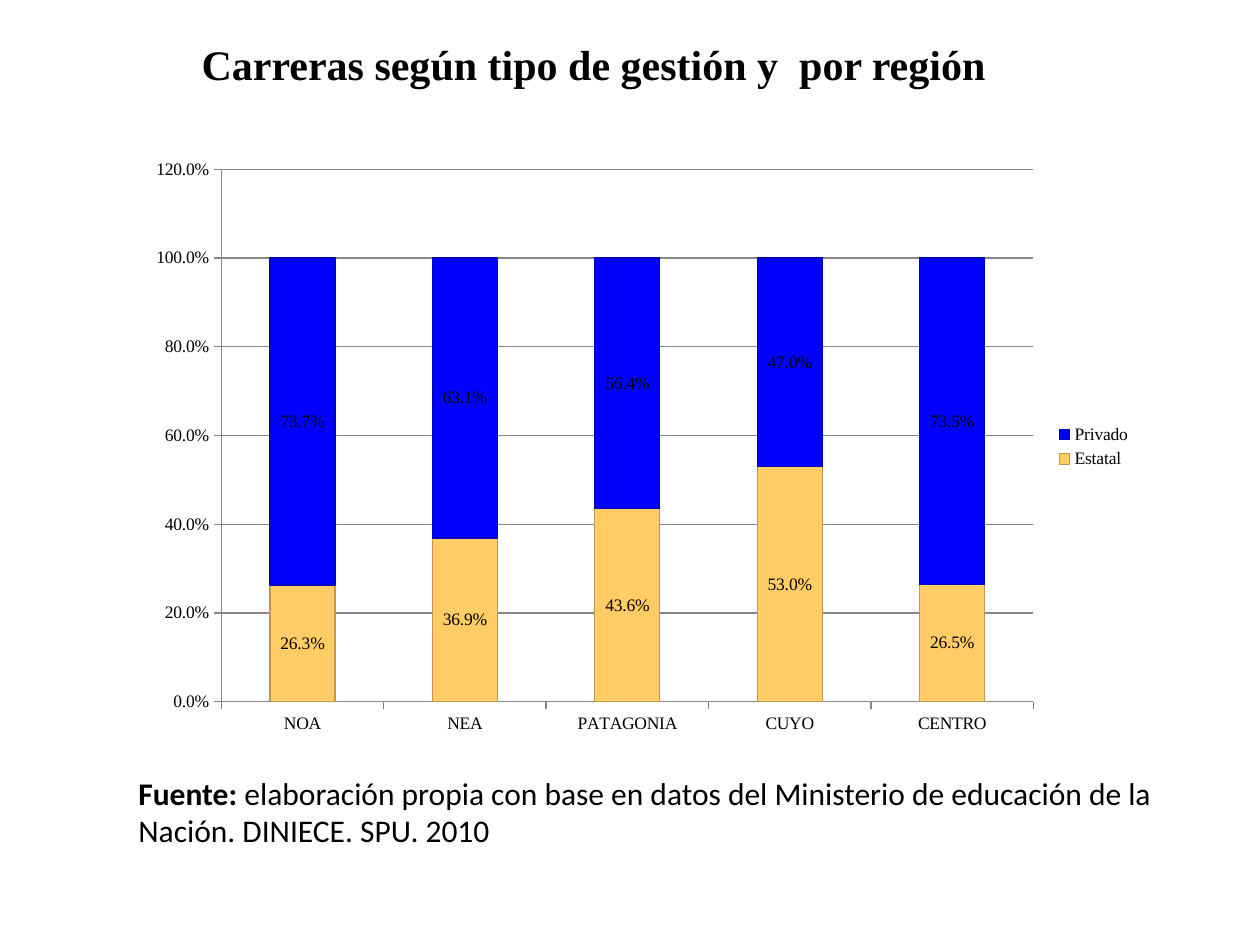
from pptx import Presentation
from pptx.chart.data import CategoryChartData
from pptx.dml.color import RGBColor
from pptx.enum.chart import XL_CHART_TYPE, XL_LABEL_POSITION, XL_LEGEND_POSITION, XL_TICK_MARK
from pptx.enum.text import MSO_ANCHOR, PP_ALIGN
from pptx.util import Inches, Pt

STACKED = XL_CHART_TYPE.COLUMN_STACKED
CENTER = XL_LABEL_POSITION.CENTER
RIGHT = XL_LEGEND_POSITION.RIGHT
OUTSIDE = XL_TICK_MARK.OUTSIDE
MIDDLE = MSO_ANCHOR.MIDDLE
LEFT = PP_ALIGN.LEFT

COLORS = {
    "text": "000000",
    "axis": "868686",
    "Estatal": "FFCC66",
    "Estatal edge": "BF994C",
    "Privado": "0000FF",
    "Privado edge": "0000BF",
}
PERCENT = "0.0%"


def color(name):
    return RGBColor.from_string(COLORS[name])


def set_font(font, family, size, bold=False):
    font.name = family
    font.size = Pt(size)
    font.bold = bold
    font.color.rgb = color("text")


prs = Presentation()
prs.slide_width, prs.slide_height = Inches(10), Inches(7.5)
slide = prs.slides.add_slide(prs.slide_layouts[5])

# Title
title = slide.shapes.title
title.left, title.top = Inches(1.5), Inches(0.25)
title.width, title.height = Inches(8.5), Inches(0.51)
title.text_frame.text = "Carreras según tipo de gestión y  por región"
title.text_frame.vertical_anchor = MIDDLE
heading = title.text_frame.paragraphs[0]
heading.alignment = LEFT
set_font(heading.runs[0].font, "Times New Roman", 24, True)

# Source note
source = slide.shapes.add_textbox(Inches(1), Inches(6.09), Inches(8.42), Inches(0.71))
source.text_frame.word_wrap = True
citation = source.text_frame.paragraphs[0]
for wording, bold in (
    ("Fuente: ", True),
    ("elaboración propia con base en datos del Ministerio de educación "
     "de la Nación. DINIECE. SPU. 2010", False),
):
    run = citation.add_run()
    run.text = wording
    set_font(run.font, "Calibri", 18, bold)

# Share of each management type by region
shares = CategoryChartData(number_format=PERCENT)
shares.categories = ["NOA", "NEA", "PATAGONIA", "CUYO", "CENTRO"]
shares.add_series("Estatal", [0.263, 0.369, 0.436, 0.53, 0.265])
shares.add_series("Privado", [0.737, 0.631, 0.564, 0.47, 0.735])
chart = slide.shapes.add_chart(
    STACKED, Inches(1.08), Inches(1.17), Inches(8), Inches(4.75), shares
).chart
set_font(chart.font, "Times New Roman", 10)
chart.has_title = False
chart.has_legend = True
chart.legend.position = RIGHT
chart.legend.include_in_layout = False

# Columns and their labels
columns = chart.plots[0]
columns.gap_width = 150
columns.overlap = 100
columns.vary_by_categories = False
for series in columns.series:
    series.format.fill.solid()
    series.format.fill.fore_color.rgb = color(series.name)
    series.format.line.color.rgb = color(f"{series.name} edge")
    series.format.line.width = Pt(0.75)
    labels = series.data_labels
    labels.show_value = True
    labels.number_format = PERCENT
    labels.number_format_is_linked = False
    labels.position = CENTER
    set_font(labels.font, "Times New Roman", 10)

# Axes and gridlines
shares_axis = chart.value_axis
shares_axis.minimum_scale = 0
shares_axis.maximum_scale = 1.2
shares_axis.major_unit = 0.2
shares_axis.has_major_gridlines = True
shares_axis.tick_labels.number_format = PERCENT
shares_axis.tick_labels.number_format_is_linked = False
for axis in (chart.category_axis, shares_axis):
    axis.major_tick_mark = OUTSIDE
    axis.format.line.color.rgb = color("axis")
    axis.format.line.width = Pt(0.75)
gridline = shares_axis.major_gridlines.format.line
gridline.color.rgb = color("axis")
gridline.width = Pt(0.75)

prs.save("out.pptx")
